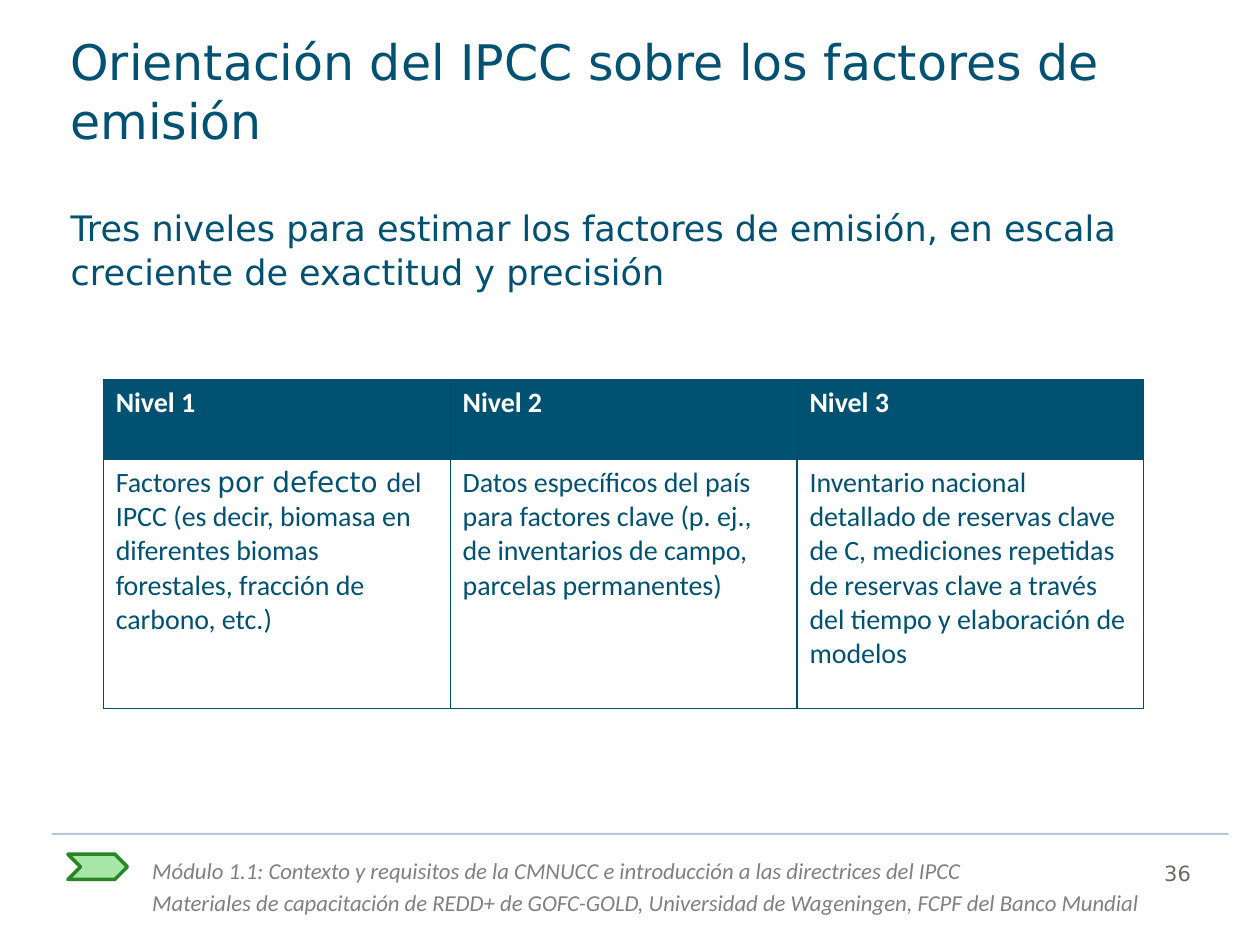
from lxml.etree import SubElement
from pptx import Presentation
from pptx.dml.color import RGBColor as Rgb
from pptx.enum.shapes import MSO_CONNECTOR as Connector, MSO_SHAPE as Shape
from pptx.enum.text import MSO_ANCHOR as Anchor, MSO_AUTO_SIZE as AutoSize, PP_ALIGN as Align
from pptx.oxml.ns import qn
from pptx.util import Cm, Pt

COLOURS = {
    "teal": "005172", "border": "004F6F", "white": "FFFFFF", "footer": "808080",
    "number": "706762", "arrow": "A8E6A8", "arrow_edge": "278626",
}
SANS, CALIBRI = "DejaVu Sans", "Calibri"
HEADER = {"name": CALIBRI, "size": Pt(16), "bold": True, "color": "white"}
CELL = {"name": CALIBRI, "size": Pt(16), "bold": False, "color": "teal"}
FOOTER = {"name": CALIBRI, "size": Pt(13), "italic": True, "color": "footer"}
NUMBER = {"name": SANS, "size": Pt(12), "color": "number"}
TITLE = {"name": SANS, "size": Pt(28), "color": "teal"}
BODY = {"name": SANS, "size": Pt(20), "color": "teal"}

LEVELS = {
    "Nivel 1": [
        ("Factores ", CALIBRI),
        ("por defecto ", SANS),
        ("del IPCC (es decir, biomasa en diferentes biomas forestales, "
         "fracción de carbono, etc.)", CALIBRI),
    ],
    "Nivel 2": [
        ("Datos específicos del país para factores clave (p. ej., "
         "de inventarios de campo, parcelas permanentes)", CALIBRI),
    ],
    "Nivel 3": [
        ("Inventario nacional detallado de reservas clave de C, mediciones repetidas "
         "de reservas clave a través del tiempo y elaboración de modelos", CALIBRI),
    ],
}
FOOTER_LINES = [
    "Módulo 1.1: Contexto y requisitos de la CMNUCC e introducción a las directrices del IPCC",
    "Materiales de capacitación de REDD+ de GOFC-GOLD, Universidad de Wageningen, "
    "FCPF del Banco Mundial",
]


def colour(name):
    return Rgb.from_string(COLOURS[name])


def add_span(para, text, style):
    span = para.add_run()
    span.text = text
    for key, value in style.items():
        if key == "color":
            span.font.color.rgb = colour(value)
        else:
            setattr(span.font, key, value)


def place(shape, left, top, width, height):
    shape.left, shape.top, shape.width, shape.height = map(Cm, (left, top, width, height))


def write_lines(frame, lines, style, spacing=None):
    """Fill a text frame, one left-aligned paragraph a line."""
    frame.word_wrap = True
    frame.auto_size = AutoSize.NONE
    frame.vertical_anchor = Anchor.TOP
    for index, line in enumerate(lines):
        para = frame.add_paragraph() if index else frame.paragraphs[0]
        para.alignment = Align.LEFT
        para.space_before = Pt(0)
        if spacing:
            para.line_spacing = spacing
        add_span(para, line, style)


def fill_title(page):
    title = page.shapes.title
    place(title, 1.37, 0.64, 23.44, 2.54)
    frame = title.text_frame
    frame.margin_left, frame.margin_top, frame.margin_bottom = Cm(0.05), 0, 0
    write_lines(frame, ["Orientación del IPCC sobre los factores de emisión"], TITLE)


def fill_body(page):
    body = page.placeholders[1]
    place(body, 1.17, 4.01, 23.67, 2.97)
    props = body.text_frame.paragraphs[0]._p.get_or_add_pPr()
    props.set("marL", "0")
    props.set("indent", "0")
    SubElement(props, qn("a:buNone"))
    write_lines(body.text_frame, ["Tres niveles para estimar los factores de emisión, "
                                  "en escala creciente de exactitud y precisión"], BODY, Pt(25))


def add_text(page, at, lines, style):
    box = page.shapes.add_textbox(*map(Cm, at))
    write_lines(box.text_frame, lines, style, Pt(18))


def set_borders(cell):
    props = cell._tc.get_or_add_tcPr()
    for index, side in enumerate(("lnL", "lnR", "lnT", "lnB")):
        line = props.makeelement(qn(f"a:{side}"), {"w": str(Pt(0.75))})
        fill = SubElement(line, qn("a:solidFill"))
        SubElement(fill, qn("a:srgbClr"), val=COLOURS["border"])
        props.insert(index, line)


def add_levels_table(page):
    at = map(Cm, (2.08, 7.66, 20.98, 6.63))
    table = page.shapes.add_table(2, len(LEVELS), *at).table
    table.horz_banding = False
    for row, height in zip(table.rows, (1.6, 5.03)):
        row.height = Cm(height)
    for column, (level, spans) in enumerate(LEVELS.items()):
        head, detail = table.cell(0, column), table.cell(1, column)
        head.fill.solid()
        head.fill.fore_color.rgb = colour("teal")
        add_span(head.text_frame.paragraphs[0], level, HEADER)
        detail.fill.background()
        for text, font in spans:
            add_span(detail.text_frame.paragraphs[0], text, CELL | {"name": font})
        set_borders(head)
        set_borders(detail)


def add_arrow(page):
    arrow = page.shapes.add_shape(Shape.CHEVRON, *map(Cm, (1.37, 17.22, 1.2, 0.51)))
    arrow.shadow.inherit = False
    arrow.fill.solid()
    arrow.fill.fore_color.rgb = colour("arrow")
    arrow.line.color.rgb = colour("arrow_edge")
    arrow.line.width = Pt(2)


def add_footer_rule(page):
    rule = page.shapes.add_connector(Connector.STRAIGHT, *map(Cm, (1.04, 16.81, 24.77, 16.81)))
    rule.line.color.rgb = colour("teal")
    rule.line.width = Pt(1.25)
    props = rule._element.spPr
    SubElement(props.find(".//" + qn("a:srgbClr")), qn("a:alpha"), val="30000")
    SubElement(props, qn("a:effectLst"))


def main():
    deck = Presentation()
    deck.slide_width, deck.slide_height = Cm(25.4), Cm(19.05)
    page = deck.slides.add_slide(deck.slide_layouts[1])
    add_text(page, (2.82, 17.07, 22.58, 1.55), FOOTER_LINES, FOOTER)
    add_arrow(page)
    add_text(page, (23.22, 17.09, 1.55, 0.84), ["36"], NUMBER)
    add_footer_rule(page)
    fill_title(page)
    add_levels_table(page)
    fill_body(page)
    deck.save("out.pptx")


if __name__ == "__main__":
    main()
